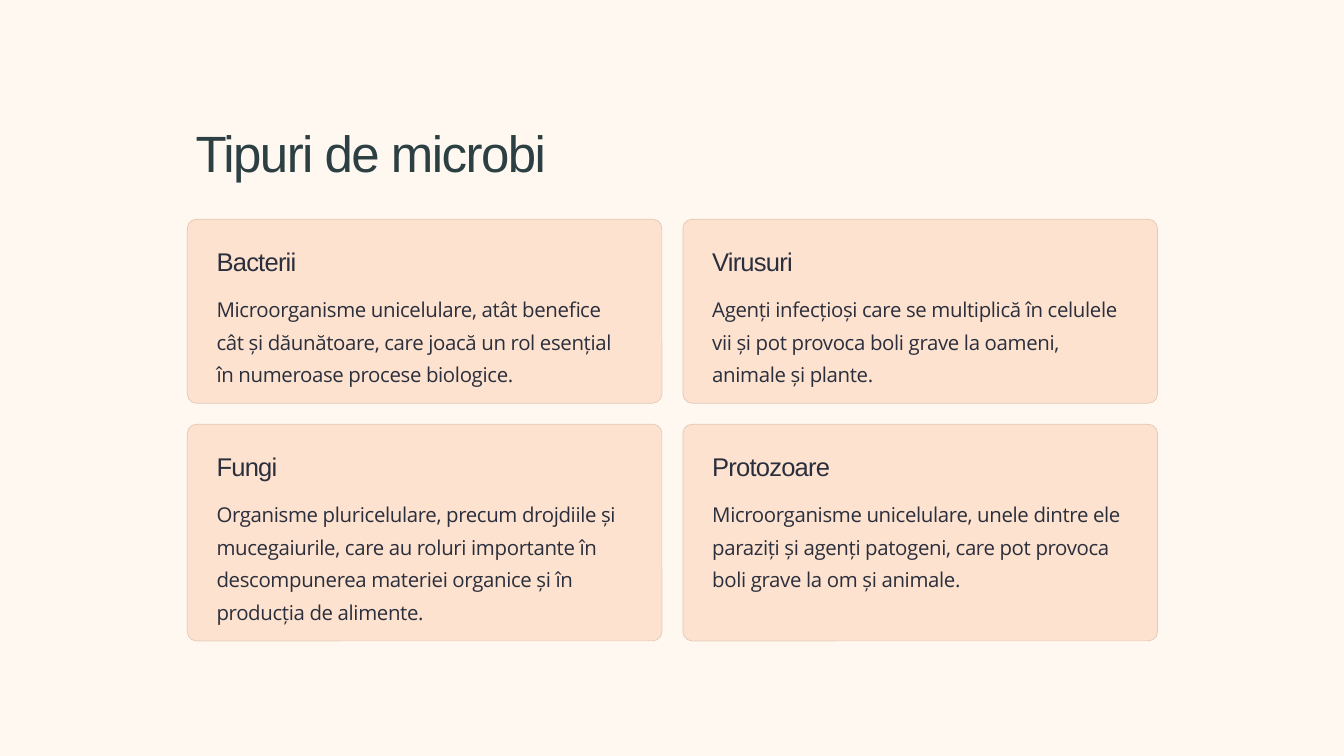
from dataclasses import dataclass
from itertools import accumulate

from pptx import Presentation
from pptx.dml.color import RGBColor
from pptx.enum.shapes import MSO_SHAPE
from pptx.util import Inches, Pt


@dataclass(frozen=True)
class Theme:
    page: str = "FFF8F0"
    card: str = "FCE2CF"
    border: str = "E2C8B5"
    border_width: float = 0.6
    title: tuple = ("Arial", 43.7, "2C3F42", 54.7, -130)
    heading: tuple = ("Arial", 21.9, "2B2E3C", 27.3, -70)
    body: tuple = ("Open Sans", 17.5, "2B2E3C", 28, -30)


THEME = Theme()
WIDTH, HEIGHT = 16, 9
LEFT, TOP, GAP, PAD = 2.23, 2.61, 0.25, 0.25
COLUMNS = (5.65, 5.65)
ROWS = (2.19, 2.58)
RADIUS = 0.11
TITLE_TOP, TITLE_WIDTH, TITLE_HEIGHT = 1.37, 6.08, 0.76
HEADING_WIDTH, HEADING_HEIGHT, BODY_OFFSET = 3.04, 0.38, 0.78

CARDS = (
    (
        ("Bacterii", "Microorganisme unicelulare, atât benefice cât și dăunătoare, "
         "care joacă un rol esențial în numeroase procese biologice."),
        ("Virusuri", "Agenți infecțioși care se multiplică în celulele vii și pot "
         "provoca boli grave la oameni, animale și plante."),
    ),
    (
        ("Fungi", "Organisme pluricelulare, precum drojdiile și mucegaiurile, care au "
         "roluri importante în descompunerea materiei organice și în producția de alimente."),
        ("Protozoare", "Microorganisme unicelulare, unele dintre ele paraziți și agenți "
         "patogeni, care pot provoca boli grave la om și animale."),
    ),
)


def starts(first, sizes):
    return accumulate(sizes[:-1], lambda at, size: at + size + GAP, initial=first)


def add_panel(s, kind, box, fill, border=None):
    sp = s.shapes.add_shape(kind, *map(Inches, box))
    sp.shadow.inherit = False
    sp.fill.solid()
    sp.fill.fore_color.rgb = RGBColor.from_string(fill)
    if border:
        sp.line.color.rgb = RGBColor.from_string(border)
        sp.line.width = Pt(THEME.border_width)
    else:
        sp.line.fill.background()
    return sp


def add_text(s, box, text, style, wrap=False):
    name, size, color, leading, tracking = style
    tf = s.shapes.add_textbox(*map(Inches, box)).text_frame
    tf.word_wrap = wrap
    p = tf.paragraphs[0]
    p.line_spacing = Pt(leading)
    r = p.add_run()
    r.text = text
    for key, value in {"name": name, "size": Pt(size)}.items():
        setattr(r.font, key, value)
    r.font.color.rgb = RGBColor.from_string(color)
    r._r.get_or_add_rPr().set("spc", str(tracking))


def add_card(s, box, heading, body):
    x, y, w, h = box
    sp = add_panel(s, MSO_SHAPE.ROUNDED_RECTANGLE, box, THEME.card, THEME.border)
    sp.adjustments[0] = RADIUS / h
    add_text(s, (x + PAD, y + PAD, HEADING_WIDTH, HEADING_HEIGHT), heading, THEME.heading)
    body_box = (x + PAD, y + BODY_OFFSET, w - 2 * PAD, h - BODY_OFFSET - PAD)
    add_text(s, body_box, body, THEME.body, wrap=True)


def main():
    prs = Presentation()
    prs.slide_width, prs.slide_height = Inches(WIDTH), Inches(HEIGHT)
    s = prs.slides.add_slide(prs.slide_layouts[6])
    add_panel(s, MSO_SHAPE.RECTANGLE, (0, 0, WIDTH, HEIGHT), THEME.page)
    add_text(s, (LEFT, TITLE_TOP, TITLE_WIDTH, TITLE_HEIGHT), "Tipuri de microbi", THEME.title)
    for y, h, row in zip(starts(TOP, ROWS), ROWS, CARDS):
        for x, w, (heading, body) in zip(starts(LEFT, COLUMNS), COLUMNS, row):
            add_card(s, (x, y, w, h), heading, body)
    prs.save("out.pptx")


if __name__ == "__main__":
    main()
